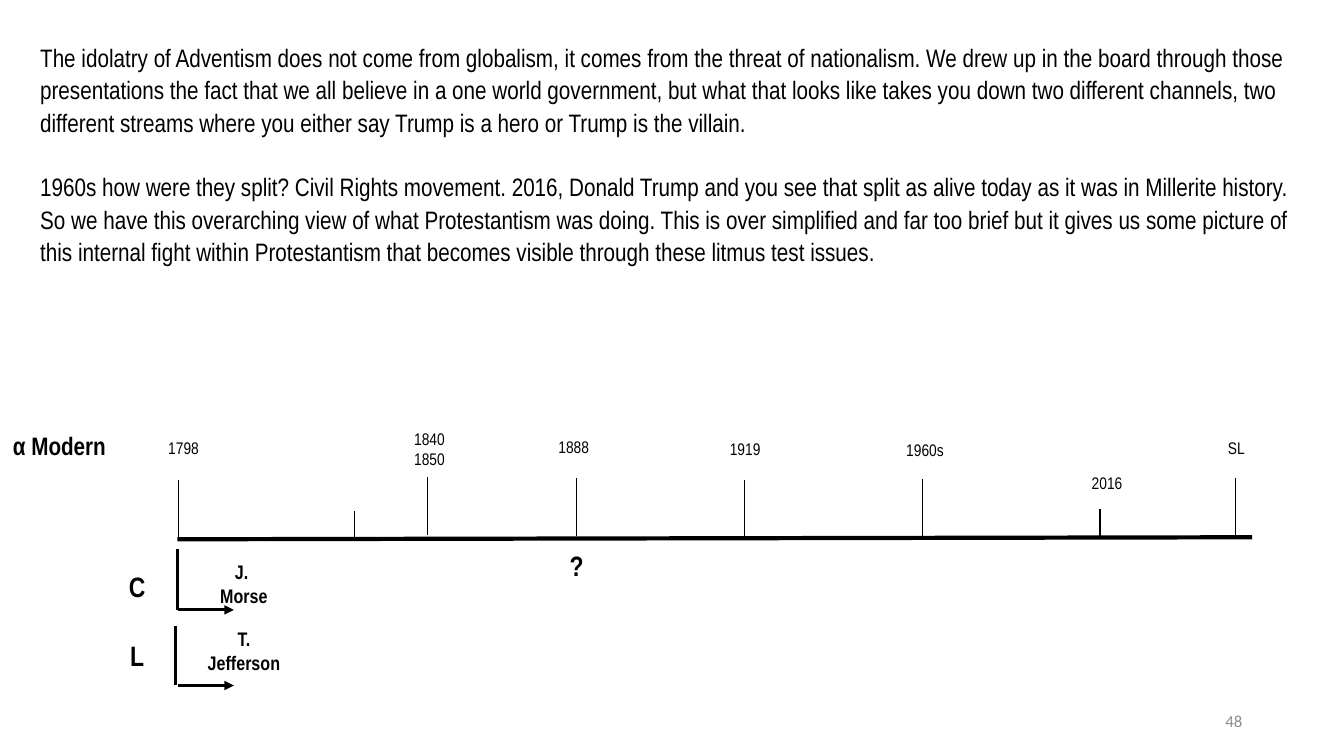
import pptx
import pptx.util
import pptx.dml.color
import pptx.enum.shapes
import pptx.enum.text
import pptx.oxml.ns
from lxml import etree

Inches = pptx.util.Inches
Pt = pptx.util.Pt
ALIGN = pptx.enum.text.PP_ALIGN
BLACK = pptx.dml.color.RGBColor(0x00, 0x00, 0x00)
GREY = pptx.dml.color.RGBColor(0x8C, 0x8C, 0x8C)

BODY = [
    "The idolatry of Adventism does not come from globalism, it comes from the threat of nationalism. "
    "We drew up in the board through those presentations the fact that we all believe in a one world "
    "government, but what that looks like takes you down two different channels, two different streams "
    "where you either say Trump is a hero or Trump is the villain.",
    "1960s how were they split? Civil Rights movement. 2016, Donald Trump and you see that split as alive "
    "today as it was in Millerite history. So we have this overarching view of what Protestantism was "
    "doing. This is over simplified and far too brief but it gives us some picture of this internal fight "
    "within Protestantism that becomes visible through these litmus test issues.",
]

LONG_TICK, SHORT_TICK = 0.58, 0.27
EVENTS = [
    (1.77, 4.76, LONG_TICK, ["1798"], 1.57, 4.29),
    (3.52, 5.07, SHORT_TICK, [], 0, 0),
    (4.24, 4.73, LONG_TICK, ["1840", "1850"], 4.01, 4.2),
    (5.72, 4.74, LONG_TICK, ["1888"], 5.44, 4.28),
    (7.38, 4.76, LONG_TICK, ["1919"], 7.14, 4.3),
    (9.15, 4.75, LONG_TICK, ["1960s"], 8.89, 4.31),
    (10.91, 5.05, SHORT_TICK, ["2016"], 10.73, 4.64),
    (12.25, 4.74, LONG_TICK, ["SL"], 12.08, 4.29),
]

STREAMS = [
    ("C", 5.6, ["J. ", "Morse"], 5.51, 1.76, 5.45, 6.05),
    ("L", 6.29, ["T.", "Jefferson"], 6.17, 1.74, 6.21, 6.8),
]


def add_text(s, lines, x, y, w, h, size, bold=False, align=ALIGN.LEFT,
             font="Arial Narrow", color=BLACK):
    tf = s.shapes.add_textbox(Inches(x), Inches(y), Inches(w), Inches(h)).text_frame
    tf.word_wrap = True
    tf.text = "\n".join(lines)
    for p in tf.paragraphs:
        p.alignment = align
        for r in p.runs:
            r.font.name = font
            r.font.size = Pt(size)
            r.font.bold = bold
            r.font.color.rgb = color
    return tf


def add_line(s, x1, y1, x2, y2, width, arrow=False):
    line = s.shapes.add_connector(pptx.enum.shapes.MSO_CONNECTOR.STRAIGHT,
                                  Inches(x1), Inches(y1), Inches(x2), Inches(y2))
    line.line.color.rgb = BLACK
    line.line.width = Pt(width)
    qn = pptx.oxml.ns.qn
    if arrow:
        etree.SubElement(line.line._get_or_add_ln(), qn("a:tailEnd"), type="triangle")
    etree.SubElement(line._element.spPr, qn("a:effectLst"))


def main():
    prs = pptx.Presentation()
    prs.slide_width, prs.slide_height = Inches(13.33), Inches(7.5)
    s = prs.slides.add_slide(prs.slide_layouts[6])

    tf = add_text(s, ["48"], 9.42, 6.95, 3, 0.4, 12, align=ALIGN.RIGHT, font="Calibri", color=GREY)
    tf.vertical_anchor = pptx.enum.text.MSO_ANCHOR.MIDDLE

    tf = add_text(s, BODY, 0.3, 0.35, 12.72, 2.35, 18)
    for p in tf.paragraphs:
        p.line_spacing = 1.07
    tf.paragraphs[1].space_before = Pt(23)

    add_line(s, 1.76, 5.35, 12.42, 5.33, 3)
    for tick_x, top, length, label, x, y in EVENTS:
        add_line(s, tick_x, top, tick_x, top + length, 0.75)
        if label:
            add_text(s, label, x, y, 0.7, 0.1 + 0.2 * len(label), 12)

    add_text(s, ["α Modern"], 0.03, 4.22, 1.43, 0.4, 18, bold=True)
    add_text(s, ["?"], 5.36, 5.39, 0.72, 0.44, 20, bold=True, align=ALIGN.CENTER)

    for letter, letter_y, name, name_y, x, top, bottom in STREAMS:
        add_line(s, x, top, x, bottom, 2.25)
        add_line(s, 1.77, bottom, 2.32, bottom, 2.25, arrow=True)
        add_text(s, [letter], 1, letter_y, 0.72, 0.44, 20, bold=True, align=ALIGN.CENTER)
        add_text(s, name, 1.95, name_y, 0.94, 0.57, 14, bold=True, align=ALIGN.CENTER)

    prs.save("out.pptx")


if __name__ == "__main__":
    main()
